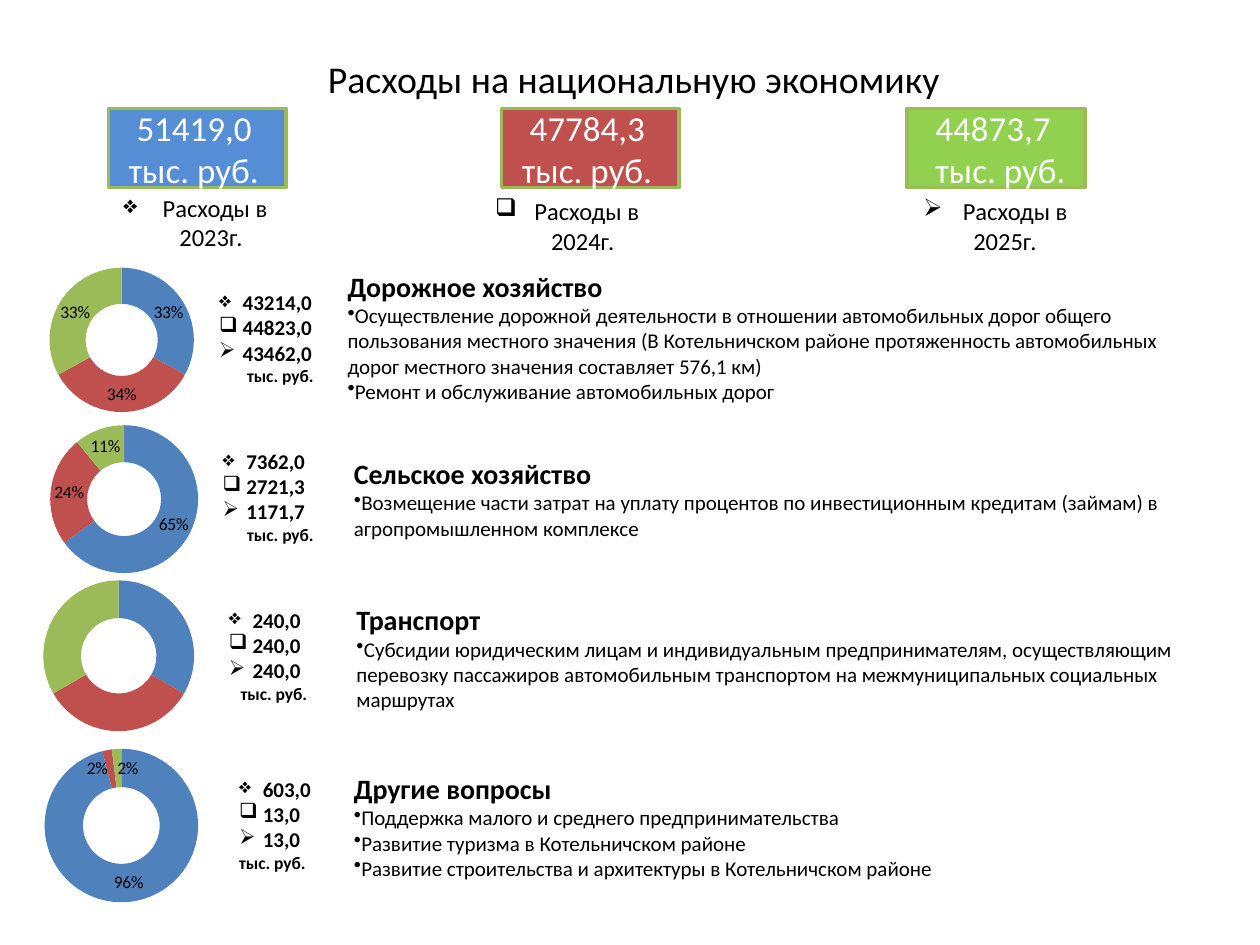
from lxml import etree
from pptx import Presentation
from pptx.chart.data import CategoryChartData
from pptx.dml.color import RGBColor
from pptx.enum.chart import XL_CHART_TYPE
from pptx.enum.shapes import MSO_SHAPE
from pptx.enum.text import MSO_ANCHOR, MSO_AUTO_SIZE, PP_ALIGN
from pptx.oxml.ns import qn
from pptx.util import Pt

DOUGHNUT = XL_CHART_TYPE.DOUGHNUT
RECTANGLE = MSO_SHAPE.RECTANGLE
MIDDLE, TOP = MSO_ANCHOR.MIDDLE, MSO_ANCHOR.TOP
GROW, FIXED = MSO_AUTO_SIZE.SHAPE_TO_FIT_TEXT, MSO_AUTO_SIZE.NONE
LEFT, CENTER = PP_ALIGN.LEFT, PP_ALIGN.CENTER

BLACK = RGBColor(0x00, 0x00, 0x00)
WHITE = RGBColor(0xFF, 0xFF, 0xFF)
SKY = RGBColor(0x55, 0x8E, 0xD5)
LIME = RGBColor(0x92, 0xD0, 0x50)
BLUE = RGBColor(0x4F, 0x81, 0xBD)
RED = RGBColor(0xC0, 0x50, 0x4D)
GREEN = RGBColor(0x9B, 0xBB, 0x59)

FONT = "Calibri"
YEARS = ["2023", "2024", "2025"]
YEAR_BULLETS = ["❖", "❑", "➢"]
UNIT = "тыс. руб."

TITLE = {"size": Pt(21.6)}
TOTAL = {"size": Pt(20)}
CAPTION = {"size": Pt(14)}
AMOUNT = {"size": Pt(12), "bold": True}
SMALL_UNIT = {"size": Pt(10), "bold": True}
HEADING = {"size": Pt(16), "bold": True}
BODY = {"size": Pt(12), "bold": False}

# Total, fill, box left, indents of its two lines, caption left and top, year indent
TOTALS = [
    ("51419,0", SKY, 61.9, (9, 4.5), (63.4, 106.6), 32),
    ("47784,3", RED, 286.6, (9, 4.5), (275.8, 108.7), 32),
    ("44873,7", LIME, 518.4, (9, 9), (520.6, 108.7), 28.5),
]

SECTIONS = [
    {
        "heading": "Дорожное хозяйство",
        "items": [
            "Осуществление дорожной деятельности в отношении автомобильных дорог общего "
            "пользования местного значения (В Котельничском районе протяженность "
            "автомобильных дорог местного значения составляет 576,1 км)",
            "Ремонт и обслуживание автомобильных дорог",
        ],
        "text_box": (191.5, 167.8, 495.4, 63.4), "bottom_inset": 18.2,
        "amounts": ["43214,0", "44823,0", "43462,0"],
        "amount_box": (118.1, 162, 73.4, 63.4), "unit_indent": 16,
        "shares": [33, 34, 33], "number_format": '0"%"', "label_shifts": {},
        "chart_box": (25.2, 151.2, 98.6, 90.7), "plot": (0.03, 0.02, 0.84, 0.91),
    },
    {
        "heading": "Сельское хозяйство",
        "items": [
            "Возмещение части затрат на уплату процентов по инвестиционным кредитам "
            "(займам) в агропромышленном комплексе",
        ],
        "text_box": (195.1, 262.1, 495.4, 45.4), "bottom_inset": 3.6,
        "amounts": ["7362,0", "2721,3", "1171,7"],
        "amount_box": (120.2, 252.7, 67.7, 63.4), "unit_indent": 14,
        "shares": [0.65, 0.24, 0.11], "number_format": "0%", "label_shifts": {},
        "chart_box": (13, 236.2, 109.4, 97.2), "plot": (0.14, 0.07, 0.78, 0.87),
    },
    {
        "heading": "Транспорт",
        "items": [
            "Субсидии юридическим лицам и индивидуальным предпринимателям, осуществляющим "
            "перевозку пассажиров автомобильным транспортом на межмуниципальных "
            "социальных маршрутах",
        ],
        "text_box": (196.6, 352.8, 501.1, 45.4), "bottom_inset": 3.6,
        "amounts": ["240,0", "240,0", "240,0"],
        "amount_box": (123.8, 343.4, 67.7, 63.4), "unit_indent": 6.6,
        "shares": [33, 33, 33], "number_format": None, "label_shifts": {},
        "chart_box": (16.6, 326.9, 101.5, 95.8), "plot": (0.08, 0.05, 0.85, 0.9),
    },
    {
        "heading": "Другие вопросы",
        "items": [
            "Поддержка малого и среднего предпринимательства",
            "Развитие туризма в Котельничском районе",
            "Развитие строительства и архитектуры в Котельничском районе",
        ],
        "text_box": (195.1, 438.5, 495.4, 67), "bottom_inset": 3.6,
        "amounts": ["603,0", "13,0", "13,0"],
        "amount_box": (129.6, 439.9, 67.7, 65.5), "unit_indent": 0,
        "shares": [0.96, 0.02, 0.02], "number_format": "0%",
        "label_shifts": {1: -0.08, 2: 0.06},
        "chart_box": (25.2, 427, 95, 91.4), "plot": (0, 0.01, 0.93, 0.96),
    },
]


def points(box):
    return [Pt(value) for value in box]


def write_lines(frame, lines, color=BLACK, align=LEFT):
    """Each line is (text, font format, bullet, left margin, first-line indent)."""
    for index, (text, font_format, bullet, margin, indent) in enumerate(lines):
        paragraph = frame.add_paragraph() if index else frame.paragraphs[0]
        paragraph.alignment = align
        properties = paragraph._p.get_or_add_pPr()
        properties.set("marL", str(Pt(margin)))
        properties.set("indent", str(Pt(indent)))
        if bullet:
            etree.SubElement(properties, qn("a:buChar"), char=bullet)
        run = paragraph.add_run()
        run.text = text
        run.font.name = FONT
        run.font.color.rgb = color
        for name, value in font_format.items():
            setattr(run.font, name, value)


def add_text(slide, box, lines, align=LEFT, **frame_format):
    frame = slide.shapes.add_textbox(*points(box)).text_frame
    settings = {"word_wrap": True, "auto_size": FIXED, "vertical_anchor": TOP}
    for name, value in {**settings, **frame_format}.items():
        setattr(frame, name, value)
    write_lines(frame, lines, align=align)


def add_total(slide, left, fill, lines):
    shape = slide.shapes.add_shape(RECTANGLE, *points((left, 61.9, 101.5, 45.4)))
    shape.shadow.inherit = False
    shape.fill.solid()
    shape.fill.fore_color.rgb = fill
    shape.line.color.rgb = GREEN
    shape.line.width = Pt(2)
    shape.text_frame.vertical_anchor = MIDDLE
    write_lines(shape.text_frame, lines, color=WHITE)


def make_layout(**values):
    layout = etree.Element(qn("c:layout"))
    manual = etree.SubElement(layout, qn("c:manualLayout"))
    for name, value in values.items():
        etree.SubElement(manual, qn("c:" + name), val=str(value))
    return layout


def add_labels(series, number_format, shifts):
    labels = series.data_labels
    labels.show_value = True
    labels.number_format = number_format
    labels.number_format_is_linked = False
    labels.font.size = Pt(10)
    labels.font.color.rgb = BLACK
    for index, shift in shifts.items():
        series.points[index].data_label.font.size = Pt(10)
    # Narrow neighbouring slices: move their labels apart
    for label in labels._element.findall(qn("c:dLbl")):
        position = label.find(qn("c:idx"))
        number = etree.Element(qn("c:numFmt"), formatCode=number_format, sourceLinked="0")
        position.addnext(number)
        position.addnext(make_layout(x=shifts[int(position.get("val"))], y=0))


def add_doughnut(slide, section):
    data = CategoryChartData()
    data.categories = YEARS
    data.add_series("Доля", section["shares"])
    chart = slide.shapes.add_chart(DOUGHNUT, *points(section["chart_box"]), data).chart
    chart.has_title = False
    chart.has_legend = False
    for name, value in {"name": FONT, "size": Pt(18)}.items():
        setattr(chart.font, name, value)
    chart.font.color.rgb = BLACK
    plot = chart.plots[0]
    plot.vary_by_categories = True
    series = plot.series[0]
    for index, color in enumerate((BLUE, RED, GREEN)):
        point_format = series.points[index].format
        point_format.fill.solid()
        point_format.fill.fore_color.rgb = color
        point_format.line.fill.background()
    if section["number_format"]:
        add_labels(series, section["number_format"], section["label_shifts"])
    # Fixed position of the ring
    area = chart._chartSpace.find(".//" + qn("c:plotArea"))
    for layout in area.findall(qn("c:layout")):
        area.remove(layout)
    x, y, width, height = section["plot"]
    area.insert(0, make_layout(layoutTarget="inner", xMode="edge", yMode="edge",
                               x=x, y=y, w=width, h=height))


def add_section(slide, section):
    add_doughnut(slide, section)
    amounts = [(amount, AMOUNT, bullet, 13.5, -13.5)
               for amount, bullet in zip(section["amounts"], YEAR_BULLETS)]
    amounts.append((UNIT, SMALL_UNIT, None, section["unit_indent"], 0))
    add_text(slide, section["amount_box"], amounts, auto_size=GROW)
    lines = [(section["heading"], HEADING, None, 0, 0)]
    lines += [(item, BODY, "•", 0, 0) for item in section["items"]]
    add_text(slide, section["text_box"], lines, vertical_anchor=MIDDLE,
             margin_bottom=Pt(section["bottom_inset"]))


def main():
    presentation = Presentation()
    presentation.slide_width, presentation.slide_height = Pt(720), Pt(540)
    slide = presentation.slides.add_slide(presentation.slide_layouts[6])

    # Title
    add_text(slide, (38.2, 27.4, 648, 34.6),
             [("Расходы на национальную экономику", TITLE, None, 0, 0)],
             align=CENTER, vertical_anchor=MIDDLE)

    # Yearly totals with captions
    for year, bullet, total in zip(YEARS, YEAR_BULLETS, TOTALS):
        amount, fill, left, indents, corner, year_indent = total
        add_total(slide, left, fill, [(amount, TOTAL, None, indents[0], 0),
                                      (UNIT, TOTAL, None, indents[1], 0)])
        add_text(slide, (*corner, 97.9, 41),
                 [("Расходы в", CAPTION, bullet, 22.5, -22.5),
                  (year + "г.", CAPTION, None, year_indent, 0)],
                 word_wrap=False, auto_size=GROW)

    # Spending areas
    for section in SECTIONS:
        add_section(slide, section)

    presentation.save("out.pptx")


if __name__ == "__main__":
    main()
